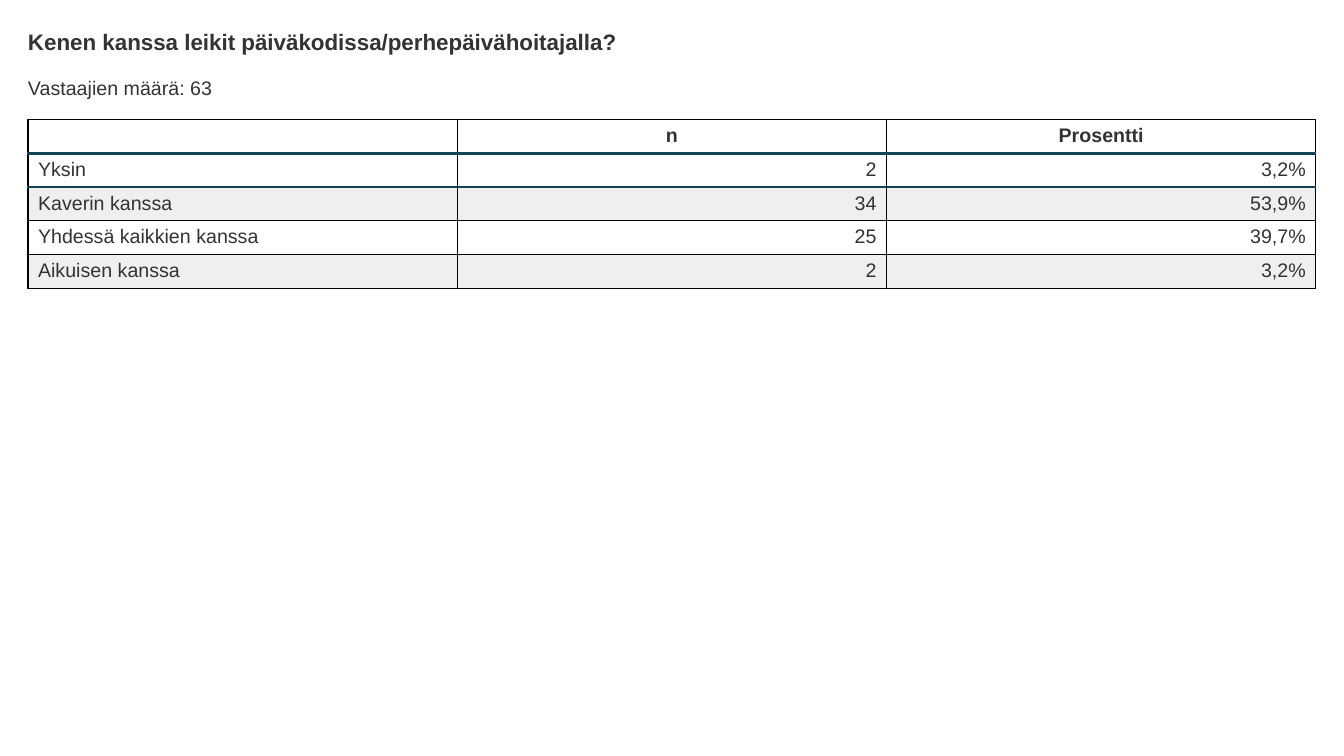
from dataclasses import dataclass

from lxml.etree import SubElement
from pptx import Presentation
from pptx.dml.color import RGBColor
from pptx.enum.text import MSO_ANCHOR, PP_ALIGN
from pptx.oxml.ns import qn
from pptx.util import Inches, Pt

COLORS = {"text": "333333", "white": "FFFFFF", "band": "EFEFEF",
          "black": "000000", "teal": "124456"}
FONT = "Arial"
PAGE_WIDTH, PAGE_HEIGHT = Inches(13.33), Inches(7.5)
COLUMN, ROW = PAGE_WIDTH / 48, PAGE_HEIGHT / 27
MARGIN_COLUMNS, CONTENT_COLUMNS = 1, 46
TABLE_TOP, TABLE_ROW = 4.28, 1.2
BODY_SIZE = 14


@dataclass(frozen=True)
class Heading:
    text: str
    top: float
    height: float
    size: int
    bold: bool


@dataclass(frozen=True)
class Answer:
    label: str
    count: str
    percent: str

    def values(self) -> tuple[str, str, str]:
        return self.label, self.count, self.percent


HEADINGS = [
    Heading("Kenen kanssa leikit päiväkodissa/perhepäivähoitajalla?", 1, 0.98, 16, True),
    Heading("Vastaajien määrä: 63", 2.7, 0.83, 14, False),
]
ANSWERS = [
    Answer("", "n", "Prosentti"),
    Answer("Yksin", "2", "3,2%"),
    Answer("Kaverin kanssa", "34", "53,9%"),
    Answer("Yhdessä kaikkien kanssa", "25", "39,7%"),
    Answer("Aikuisen kanssa", "2", "3,2%"),
]


def columns(count: float) -> int:
    return round(count * COLUMN)


def rows(count: float) -> int:
    return round(count * ROW)


def write(frame, text: str, *, size: int = BODY_SIZE, bold: bool = False,
          align: PP_ALIGN = PP_ALIGN.LEFT) -> None:
    para = frame.paragraphs[0]
    para.alignment = align
    if not text:
        SubElement(para._p, qn("a:endParaRPr"), sz=str(size * 100))
        return
    span = para.add_run()
    span.text = text
    span.font.name = FONT
    span.font.size = Pt(size)
    span.font.bold = bold
    span.font.color.rgb = RGBColor.from_string(COLORS["text"])


def add_heading(page, heading: Heading) -> None:
    box = page.shapes.add_textbox(columns(MARGIN_COLUMNS), rows(heading.top),
                                  columns(CONTENT_COLUMNS), rows(heading.height))
    frame = box.text_frame
    frame.word_wrap = True
    frame.margin_left = frame.margin_right = frame.margin_top = frame.margin_bottom = 0
    write(frame, heading.text, size=heading.size, bold=heading.bold)


def add_border(cell, side: str, color: str, width: float) -> None:
    line = SubElement(cell._tc.get_or_add_tcPr(), qn(f"a:ln{side}"), w=str(Pt(width)))
    fill = SubElement(line, qn("a:solidFill"))
    SubElement(fill, qn("a:srgbClr"), val=COLORS[color])


def format_cell(cell, row: int, column: int, text: str) -> None:
    teal_sides = {0: "B", 1: "TB", 2: "T"}.get(row, "")
    for side in "LRTB":
        color, width = ("teal", 2) if side in teal_sides else ("black", 1)
        add_border(cell, side, color, width)
    cell.fill.solid()
    shade = "band" if row and row % 2 == 0 else "white"
    cell.fill.fore_color.rgb = RGBColor.from_string(COLORS[shade])
    cell.vertical_anchor = MSO_ANCHOR.TOP
    value_align = PP_ALIGN.RIGHT if row else PP_ALIGN.CENTER
    write(cell.text_frame, text, bold=row == 0,
          align=value_align if column else PP_ALIGN.LEFT)


def add_answers(page, answers: list[Answer]) -> None:
    frame = page.shapes.add_table(len(answers), 3, columns(MARGIN_COLUMNS), rows(TABLE_TOP),
                                  columns(CONTENT_COLUMNS), rows(TABLE_ROW * len(answers)))
    table = frame.table
    table.first_row = table.horz_banding = False
    for row, answer in enumerate(answers):
        for column, text in enumerate(answer.values()):
            format_cell(table.cell(row, column), row, column, text)


def main() -> None:
    """Build the survey slide with its headings and answer table."""
    deck = Presentation()
    deck.slide_width, deck.slide_height = PAGE_WIDTH, PAGE_HEIGHT
    page = deck.slides.add_slide(deck.slide_layouts[6])
    for heading in HEADINGS:
        add_heading(page, heading)
    add_answers(page, ANSWERS)
    deck.save("out.pptx")


if __name__ == "__main__":
    main()
